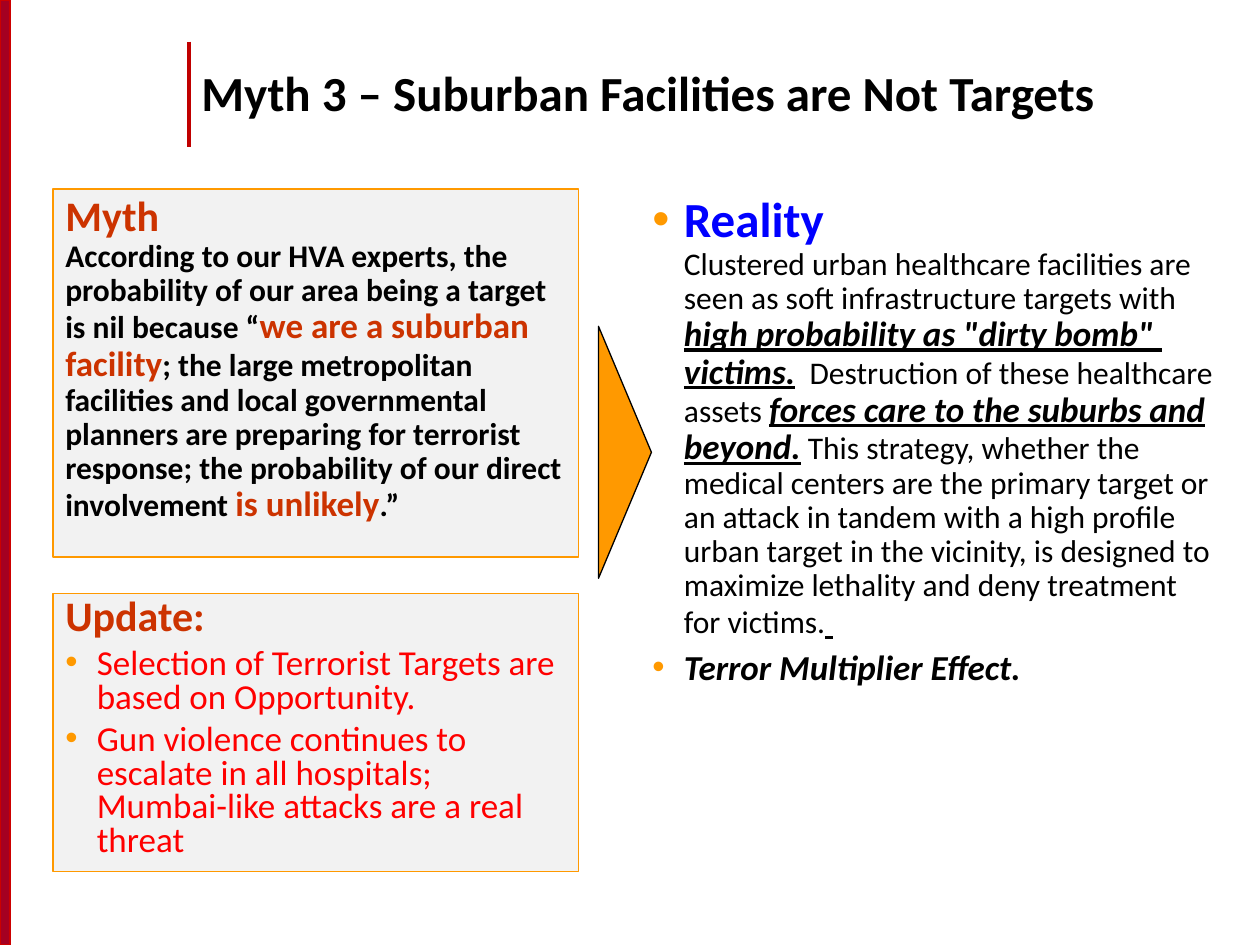
from lxml.etree import SubElement
from pptx import Presentation
from pptx.dml.color import RGBColor
from pptx.enum.shapes import MSO_CONNECTOR, MSO_SHAPE
from pptx.enum.text import MSO_ANCHOR, PP_ALIGN
from pptx.oxml.ns import qn
from pptx.util import Inches, Pt

BLACK, RUST, BLUE, RED = "000000", "CC3300", "0000FF", "FF0000"
ORANGE, PALE_GRAY = "FF9900", "F2F2F2"


def color(hex_value):
    return RGBColor.from_string(hex_value)


def write_text(shape, paragraphs, line_spacing):
    """Each paragraph is (bulleted, runs); each run is (text, size, color, styles)."""
    frame = shape.text_frame
    frame.word_wrap = True
    frame.vertical_anchor = MSO_ANCHOR.TOP
    for index, (bulleted, runs) in enumerate(paragraphs):
        paragraph = frame.paragraphs[0] if index == 0 else frame.add_paragraph()
        paragraph.alignment = PP_ALIGN.LEFT
        paragraph.line_spacing = line_spacing
        paragraph.space_before = Pt(5 if index else 0)
        if bulleted:
            properties = paragraph._p.get_or_add_pPr()
            properties.set("marL", str(Inches(0.25)))
            properties.set("indent", str(-Inches(0.25)))
            bullet_color = SubElement(properties, qn("a:buClr"))
            SubElement(bullet_color, qn("a:srgbClr"), val=ORANGE)
            SubElement(properties, qn("a:buFont"), typeface="Arial")
            SubElement(properties, qn("a:buChar"), char="•")
        for text, size, text_color, styles in runs:
            run = paragraph.add_run()
            run.text = text.rstrip("\n")
            run.font.name = "Calibri"
            run.font.size = Pt(size)
            run.font.color.rgb = color(text_color)
            run.font.bold = "b" in styles
            run.font.italic = "i" in styles
            run.font.underline = "u" in styles
            if text.endswith("\n"):
                paragraph.add_line_break()


presentation = Presentation()
presentation.slide_width = Inches(10)
presentation.slide_height = Inches(7.5)
slide = presentation.slides.add_slide(presentation.slide_layouts[6])
shapes = slide.shapes

# Left edge band, text panels and arrowhead between the columns
filled_shapes = {}
for name, preset, left, top, width, height, fill, line, line_width in [
    ("band", MSO_SHAPE.RECTANGLE, 0, 0, 0.08, 7.5, "A50021", "CC0000", 1),
    ("myth", MSO_SHAPE.RECTANGLE, 0.42, 1.5, 4.17, 2.92, PALE_GRAY, ORANGE, 0.75),
    ("update", MSO_SHAPE.RECTANGLE, 0.42, 4.71, 4.17, 2.21, PALE_GRAY, ORANGE, 0.75),
    ("arrow", MSO_SHAPE.ISOSCELES_TRIANGLE, 3.96, 3.38, 2, 0.42, ORANGE, BLACK, 0.75),
]:
    shape = shapes.add_shape(preset, Inches(left), Inches(top), Inches(width), Inches(height))
    shape.shadow.inherit = False
    shape.fill.solid()
    shape.fill.fore_color.rgb = color(fill)
    shape.line.color.rgb = color(line)
    shape.line.width = Pt(line_width)
    filled_shapes[name] = shape
filled_shapes["arrow"].rotation = 90

# Title with its vertical rule
rule = shapes.add_connector(
    MSO_CONNECTOR.STRAIGHT, Inches(1.5), Inches(0.33), Inches(1.5), Inches(1.17)
)
rule.line.color.rgb = color("C00000")
rule.line.width = Pt(2.25)
SubElement(rule._element.spPr, qn("a:effectLst"))

title = shapes.add_textbox(Inches(1.5), Inches(0.25), Inches(8.5), Inches(1.03))
write_text(
    title,
    [(False, [("Myth 3 – Suburban Facilities are Not Targets", 28, BLACK, "b")])],
    0.85,
)
title.text_frame.vertical_anchor = MSO_ANCHOR.MIDDLE

# Myth panel
write_text(filled_shapes["myth"], [
    (False, [
        ("Myth\n", 24, RUST, "b"),
        ("According to our HVA experts, the probability of our area being a target "
         "is nil because “", 18, BLACK, "b"),
        ("we are a suburban facility", 20, RUST, "b"),
        ("; the large metropolitan facilities and local governmental planners are "
         "preparing for terrorist response; the probability of our direct "
         "involvement ", 18, BLACK, "b"),
        ("is unlikely", 20, RUST, "b"),
        (".”", 18, BLACK, "b"),
    ]),
], 0.9)

# Reality column
reality = shapes.add_textbox(Inches(5.08), Inches(1.5), Inches(4.67), Inches(5.25))
write_text(reality, [
    (True, [
        ("Reality\n", 28, BLUE, "b"),
        ("Clustered urban healthcare facilities are seen as soft infrastructure "
         "targets with ", 18, BLACK, ""),
        ("high probability as \"dirty bomb\"  victims.", 20, BLACK, "biu"),
        ("  Destruction of these healthcare assets ", 18, BLACK, ""),
        ("forces care to the suburbs and beyond.", 20, BLACK, "biu"),
        (" This strategy, whether the medical centers are the primary target or an "
         "attack in tandem with a high profile urban target in the vicinity, is "
         "designed to maximize lethality and deny treatment for victims.", 18, BLACK, ""),
        (" ", 20, BLACK, "biu"),
    ]),
    (True, [("Terror Multiplier Effect.", 20, BLACK, "bi")]),
], 0.9)

# Update panel
write_text(filled_shapes["update"], [
    (False, [("Update:", 24, RUST, "b")]),
    (True, [("Selection of Terrorist Targets are based on Opportunity.", 20, RED, "")]),
    (True, [("Gun violence continues to escalate in all hospitals; Mumbai-like "
             "attacks are a real threat", 20, RED, "")]),
], 0.8)

presentation.save("out.pptx")
